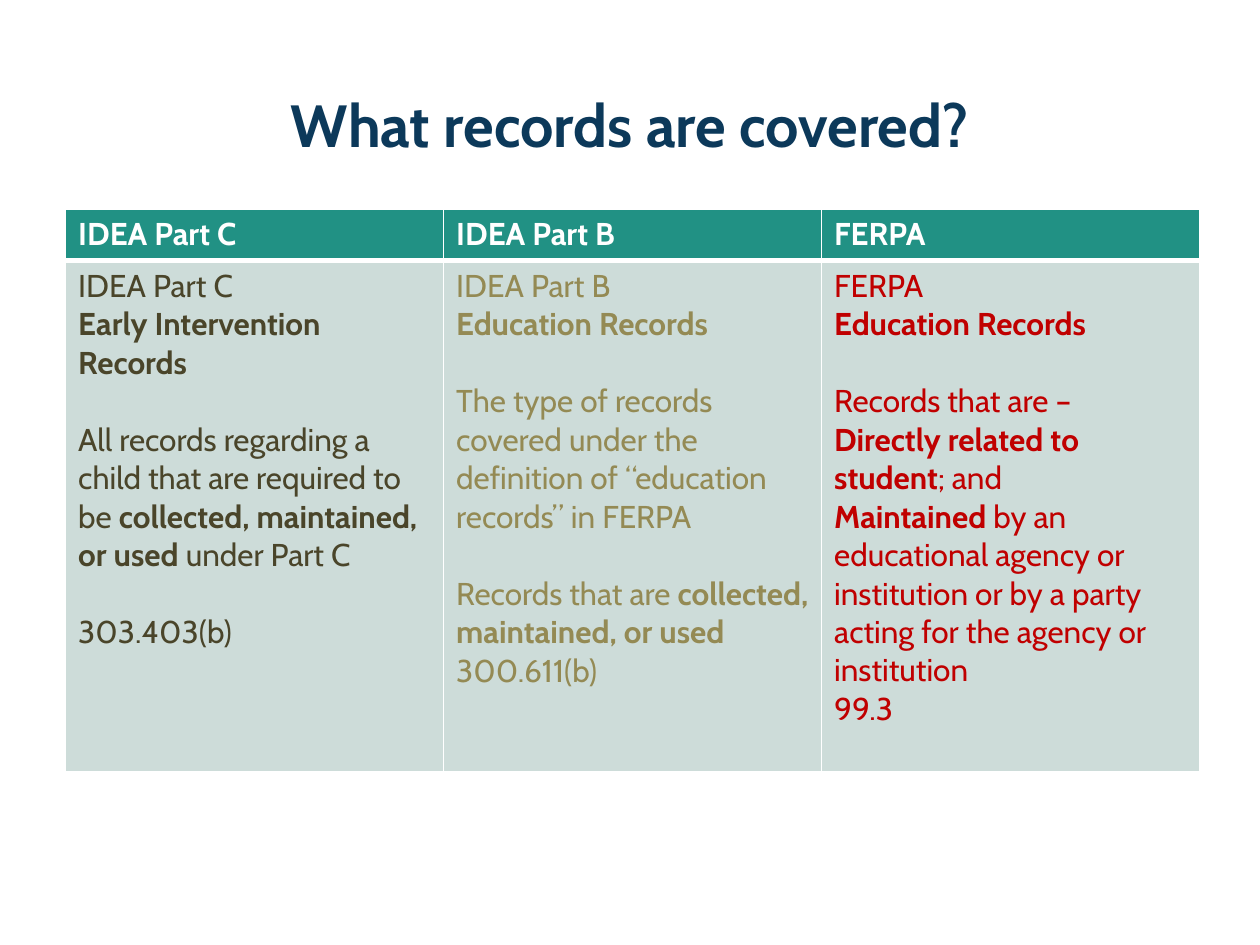
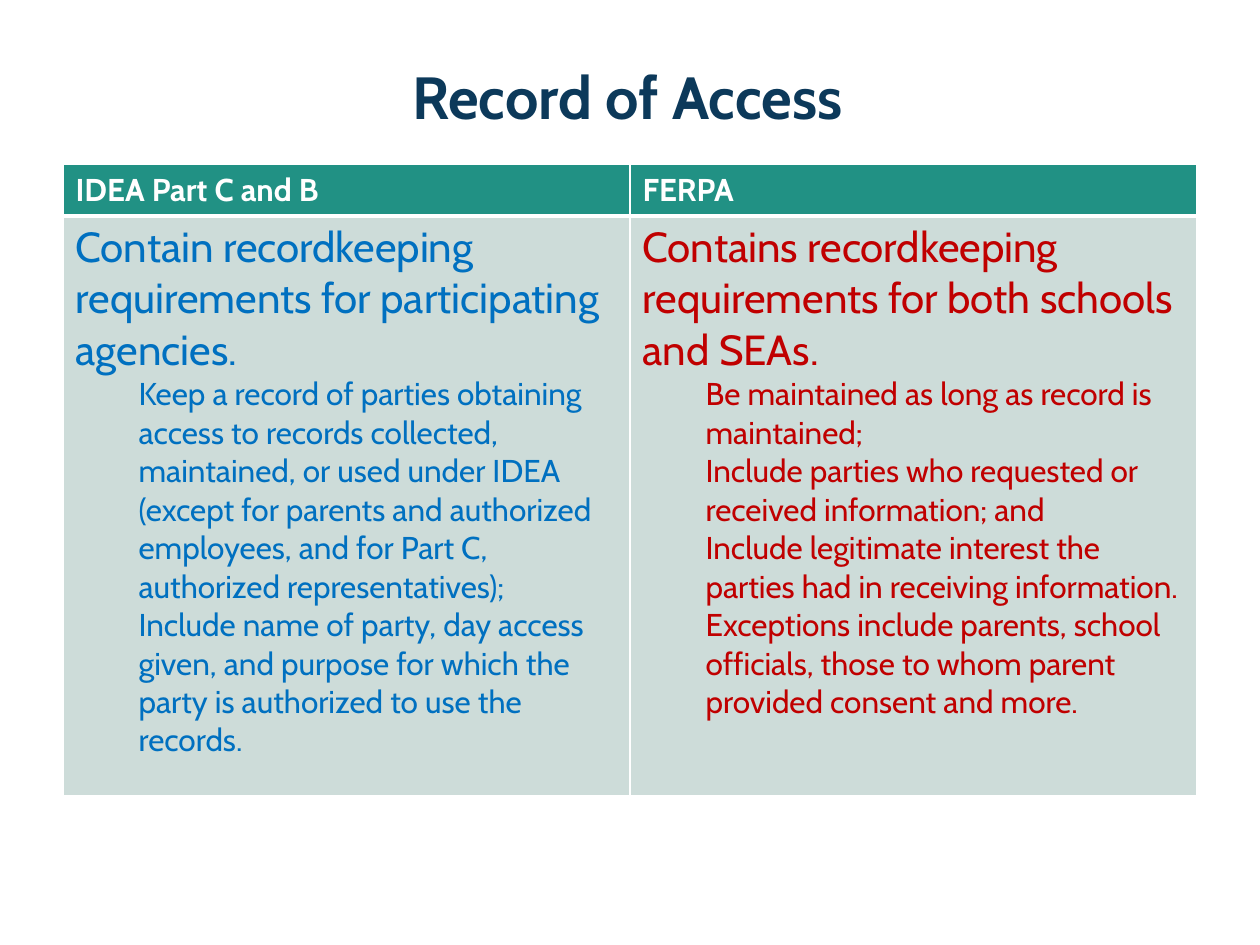
import dataclasses

import pptx
import pptx.dml.color
import pptx.enum.text
import pptx.oxml
import pptx.oxml.ns
import pptx.util


@dataclasses.dataclass(frozen=True)
class Theme:
    font: str = "Cabin"
    navy: str = "0C395A"
    teal: str = "219184"
    mist: str = "CDDCD9"
    white: str = "FFFFFF"
    brown: str = "4A452A"
    olive: str = "948A54"
    blue: str = "0070C0"
    red: str = "C00000"
    title_size: int = 34
    lead_size: int = 24
    text_size: int = 18
    blank_line: int = 22
    indent: int = 36
    table_width: int = 648
    header_height: float = 29.5
    thin_rule: int = 1
    thick_rule: int = 3


THEME = Theme()


@dataclasses.dataclass(frozen=True)
class Line:
    runs: tuple
    size: int = THEME.text_size
    gap: int = 0
    indent: int = 0


def plain(text, **format_values):
    return Line(((text, False),), **format_values)


def strong(text, **format_values):
    return Line(((text, True),), **format_values)


def mixed(*runs, **format_values):
    return Line(runs, **format_values)


def apply_values(target, values):
    for name, value in values.items():
        setattr(target, name, value)


def write_line(paragraph, line, color):
    if line.indent:
        properties = paragraph._p.get_or_add_pPr()
        properties.set("marL", str(pptx.util.Pt(line.indent)))
        properties.set("indent", "0")
    if line.gap:
        paragraph.space_before = pptx.util.Pt(line.gap)
    for text, bold in line.runs:
        run = paragraph.add_run()
        run.text = text
        apply_values(run.font, {
            "name": THEME.font,
            "size": pptx.util.Pt(line.size),
            "bold": bold,
        })
        run.font.color.rgb = pptx.dml.color.RGBColor.from_string(color)


def set_borders(cell, widths):
    properties = cell._tc.get_or_add_tcPr()
    for side in "LRTB":
        width = pptx.util.Pt(widths.get(side, THEME.thin_rule))
        properties.append(pptx.oxml.parse_xml(
            f'<a:ln{side} {pptx.oxml.ns.nsdecls("a")} w="{width}">'
            f'<a:solidFill><a:srgbClr val="{THEME.white}"/></a:solidFill>'
            f'</a:ln{side}>'
        ))


def fill_cell(cell, lines, color, fill, border_widths):
    set_borders(cell, border_widths)
    cell.fill.solid()
    cell.fill.fore_color.rgb = pptx.dml.color.RGBColor.from_string(fill)
    frame = cell.text_frame
    for index, line in enumerate(lines):
        paragraph = frame.add_paragraph() if index else frame.paragraphs[0]
        write_line(paragraph, line, color)


def add_titled_slide(presentation, title, left, top):
    slide = presentation.slides.add_slide(presentation.slide_layouts[5])
    shape = slide.shapes.title
    apply_values(shape, {
        "left": pptx.util.Pt(left),
        "top": pptx.util.Pt(top),
        "width": pptx.util.Pt(THEME.table_width),
        "height": pptx.util.Pt(88),
    })
    apply_values(shape.text_frame, {
        "vertical_anchor": pptx.enum.text.MSO_ANCHOR.BOTTOM,
        "auto_size": pptx.enum.text.MSO_AUTO_SIZE.NONE,
        "word_wrap": True,
    })
    paragraph = shape.text_frame.paragraphs[0]
    paragraph.alignment = pptx.enum.text.PP_ALIGN.CENTER
    write_line(paragraph, strong(title, size=THEME.title_size), THEME.navy)
    return slide


def add_comparison(slide, columns, left, top, body_height):
    table = slide.shapes.add_table(
        2, len(columns), pptx.util.Pt(left), pptx.util.Pt(top),
        pptx.util.Pt(THEME.table_width),
        pptx.util.Pt(THEME.header_height + body_height),
    ).table
    for row, height in zip(table.rows, (THEME.header_height, body_height)):
        row.height = pptx.util.Pt(height)
    for index, (heading, color, lines) in enumerate(columns):
        table.columns[index].width = pptx.util.Pt(THEME.table_width / len(columns))
        fill_cell(table.cell(0, index), [strong(heading)], THEME.white,
                  THEME.teal, {"B": THEME.thick_rule})
        fill_cell(table.cell(1, index), lines, color,
                  THEME.mist, {"T": THEME.thick_rule})


def lead_and_details(lead, *details):
    return [plain(lead, size=THEME.lead_size)] + [
        plain(detail, indent=THEME.indent) for detail in details
    ]


def add_records_covered(presentation):
    slide = add_titled_slide(presentation, "What records are covered?", 36, 7)
    gap = THEME.blank_line
    columns = [
        ("IDEA Part C", THEME.brown, [
            plain("IDEA Part C"),
            strong("Early Intervention Records"),
            mixed(
                ("All records regarding a child that are required to be ", False),
                ("collected, maintained, or used ", True),
                ("under Part C", False),
                gap=gap,
            ),
            plain("303.403(b)", gap=gap),
        ]),
        ("IDEA Part B", THEME.olive, [
            plain("IDEA Part B"),
            strong("Education Records"),
            plain("The type of records covered under the definition of "
                  "“education records” in FERPA", gap=gap),
            mixed(
                ("Records that are ", False),
                ("collected, maintained, or used", True),
                gap=gap,
            ),
            plain("300.611(b)"),
        ]),
        ("FERPA", THEME.red, [
            plain("FERPA"),
            strong("Education Records"),
            plain("Records that are –", gap=gap),
            mixed(("Directly related to student", True), ("; and", False)),
            mixed(
                ("Maintained", True),
                (" by an educational agency or institution or by a party "
                 "acting for the agency or institution", False),
            ),
            plain("99.3"),
        ]),
    ]
    add_comparison(slide, columns, 37.5, 119.5, 292)


def add_record_of_access(presentation):
    slide = add_titled_slide(presentation, "Record of Access", 34.5, -9.5)
    columns = [
        ("IDEA Part C and B", THEME.blue, lead_and_details(
            "Contain recordkeeping requirements for participating agencies.",
            "Keep a record of parties obtaining access to records collected, "
            "maintained, or used under IDEA (except for parents and authorized "
            "employees, and for Part C, authorized representatives);",
            "Include name of party, day access given, and purpose for which "
            "the party is authorized to use the records.",
        )),
        ("FERPA", THEME.red, lead_and_details(
            "Contains recordkeeping requirements for both schools and SEAs.",
            "Be maintained as long as record is maintained;",
            "Include parties who requested or received information; and",
            "Include legitimate interest the parties had in receiving information.",
            "Exceptions include parents, school officials, those to whom parent "
            "provided consent and more.",
        )),
    ]
    add_comparison(slide, columns, 36, 94, 331)


def main():
    presentation = pptx.Presentation()
    apply_values(presentation, {
        "slide_width": pptx.util.Pt(720),
        "slide_height": pptx.util.Pt(540),
    })
    add_records_covered(presentation)
    add_record_of_access(presentation)
    presentation.save("out.pptx")


if __name__ == "__main__":
    main()
